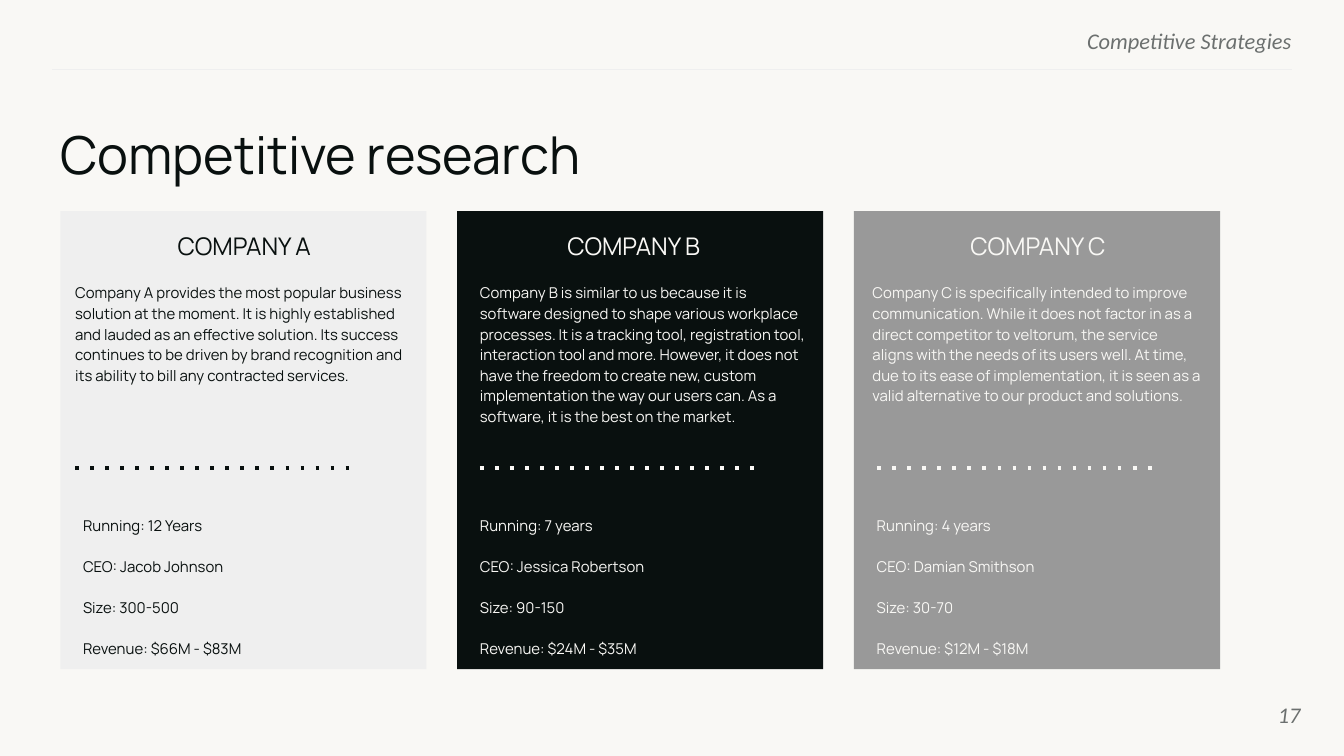
from lxml import etree
from pptx import Presentation
from pptx import util as u
from pptx.dml.color import RGBColor
from pptx.enum import shapes, text
from pptx.oxml.ns import qn

Cm, Pt = u.Cm, u.Pt
HUES = {"paper": "F9F8F5", "ink": "09100F", "pale": "EFEFEF",
        "mid": "999999", "note": "6C706F"}
HUE = {name: RGBColor.from_string(code) for name, code in HUES.items()}
ALIGN, ANCHOR = text.PP_ALIGN, text.MSO_ANCHOR

deck = Presentation()
deck.slide_width, deck.slide_height = Cm(25.4), Cm(14.29)
slide = deck.slides.add_slide(deck.slide_layouts[6])
slide.background.fill.solid()
slide.background.fill.fore_color.rgb = HUE["paper"]


def write(box, lines, hue, font, para={}, pad=0, anchor=ANCHOR.TOP):
    """Add a text box with one paragraph per line; box is in cm."""
    frame = slide.shapes.add_textbox(*map(Cm, box)).text_frame
    look = {"word_wrap": True, "vertical_anchor": anchor,
            "margin_left": 0, "margin_right": 0,
            "margin_top": Cm(pad), "margin_bottom": Cm(pad)}
    for key, val in look.items():
        setattr(frame, key, val)
    for i, line in enumerate(lines):
        p = frame.paragraphs[0] if i == 0 else frame.add_paragraph()
        for key, val in para.items():
            if i or key != "space_before":
                setattr(p, key, val)
        run = p.add_run()
        run.text = line
        for key, val in font.items():
            setattr(run.font, key, val)
        run.font.color.rgb = HUE[hue]


def rule(left, right, top, hue, width, dash=None):
    """Draw a level line, lengths in cm and width in points."""
    line = slide.shapes.add_connector(
        shapes.MSO_CONNECTOR.STRAIGHT, Cm(left), Cm(top), Cm(right), Cm(top))
    line.line.color.rgb = HUE[hue]
    line.line.width = Pt(width)
    if dash:
        etree.SubElement(line.line._get_or_add_ln(), qn("a:prstDash"), val=dash)
    etree.SubElement(line._element.spPr, qn("a:effectLst"))


# Text styles
NOTE = {"name": "Calibri", "size": Pt(12), "italic": True}
TITLE = {"name": "Manrope", "size": Pt(28)}
HEAD = {"name": "Manrope", "size": Pt(13)}
BODY = {"name": "Manrope", "size": Pt(8)}
RIGHT = {"alignment": ALIGN.RIGHT}

# Header and title
write((14.63, 0.51, 9.78, 0.46), ["Competitive Strategies"], "note", NOTE, RIGHT)
rule(0.99, 24.41, 1.31, "pale", 0.75)
write((1.14, 2.31, 23.44, 1.3), ["Competitive research"], "ink", TITLE,
      {"space_after": Pt(10)})

# Cards: name, fill, text colour, (left, width) of head and body,
# left of dots and facts, all measured from the card's edge
CARDS = [
    ("COMPANY A", "pale", "ink", (0.81, 5.33), (0.28, 6.38), 0.28, 0.43,
     "Company A provides the most popular business solution at the moment. "
     "It is highly established and lauded as an effective solution. Its "
     "success continues to be driven by brand recognition and its ability "
     "to bill any contracted services.",
     ["12 Years", "Jacob Johnson", "300-500", "$66M - $83M"]),
    ("COMPANY B", "ink", "paper", (0.53, 5.61), (0.43, 6.22), 0.43, 0.43,
     "Company B is similar to us because it is software designed to shape "
     "various workplace processes. It is a tracking tool, registration tool, "
     "interaction tool and more. However, it does not have the freedom to "
     "create new, custom implementation the way our users can. As a "
     "software, it is the best on the market.",
     ["7 years", "Jessica Robertson", "90-150", "$24M - $35M"]),
    ("COMPANY C", "mid", "paper", (0.81, 5.33), (0.35, 6.22), 0.44, 0.43,
     "Company C is specifically intended to improve communication. While it "
     "does not factor in as a direct competitor to veltorum, the service "
     "aligns with the needs of its users well. At time, due to its ease of "
     "implementation, it is seen as a valid alternative to our product and "
     "solutions.",
     ["4 years", "Damian Smithson", "30-70", "$12M - $18M"]),
]
LABELS = ["Running", "CEO", "Size", "Revenue"]

for i, (name, fill, hue, head, body, dots, facts, about, data) in enumerate(CARDS):
    x = 1.14 + 7.5 * i
    card = slide.shapes.add_shape(shapes.MSO_SHAPE.RECTANGLE,
                                  Cm(x), Cm(3.99), Cm(6.92), Cm(8.66))
    card.shadow.inherit = False
    card.fill.solid()
    card.fill.fore_color.rgb = HUE[fill]
    card.line.fill.background()

    write((x + head[0], 4.32, head[1], 0.71), [name], hue, HEAD,
          {"alignment": ALIGN.CENTER, "line_spacing": 0.94}, 0.1)
    write((x + body[0], 5.22, body[1], 3.28), [about], hue, BODY,
          {"line_spacing": 1.15}, 0.1)
    rule(x + dots, x + dots + 5.32, 8.84, hue, 2, "dot")
    write((x + facts, 9.4, 5.33, 2.9),
          [f"{label}: {val}" for label, val in zip(LABELS, data)], hue, BODY,
          {"line_spacing": 1.78, "space_before": Pt(5)}, 0.1)

# Page number
write((23.06, 12.96, 1.52, 1.09), ["17"], "note", NOTE, RIGHT,
      anchor=ANCHOR.MIDDLE)

deck.save("out.pptx")
